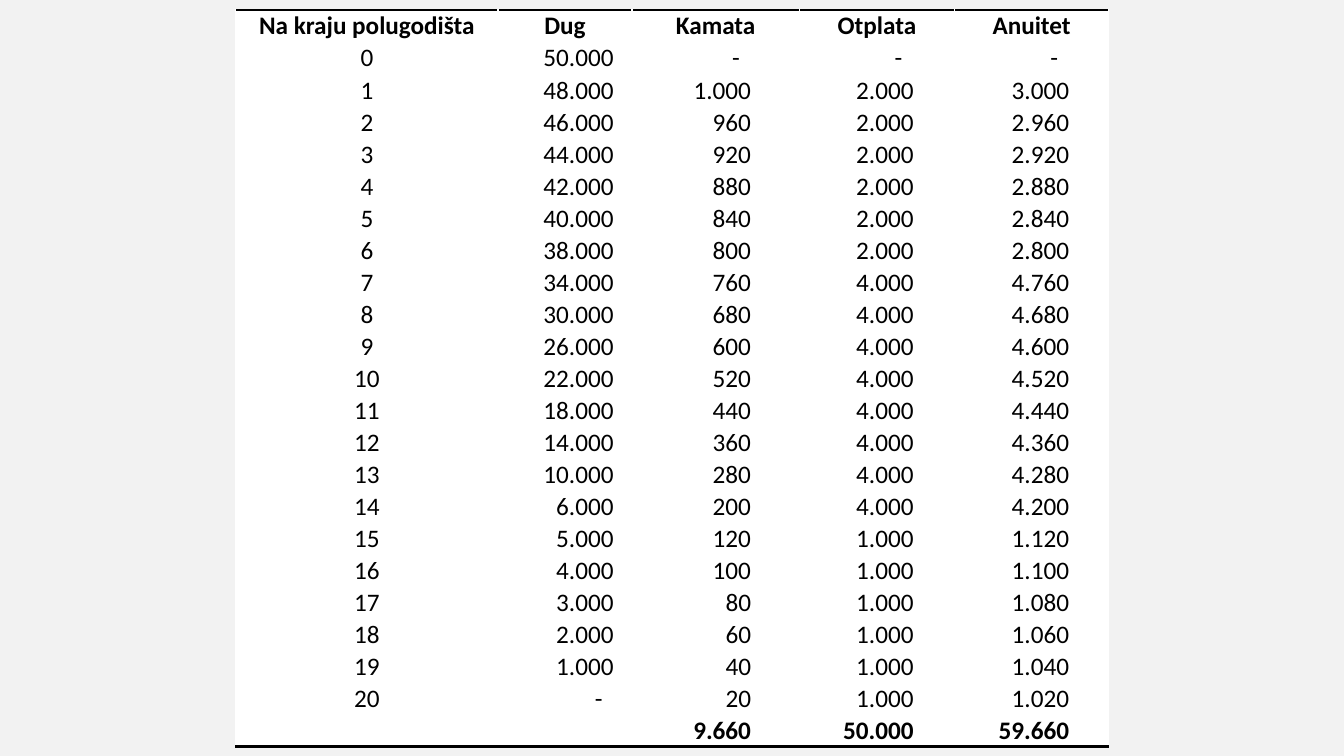
"""Build a one-slide loan repayment schedule with half-yearly instalments."""
from dataclasses import dataclass

from lxml import etree
from pptx import Presentation
from pptx.dml.color import RGBColor
from pptx.enum.text import MSO_ANCHOR, PP_ALIGN
from pptx.oxml.ns import qn
from pptx.util import Pt

CENTER, RIGHT = PP_ALIGN.CENTER, PP_ALIGN.RIGHT
MIDDLE = MSO_ANCHOR.MIDDLE


@dataclass(frozen=True)
class Theme:
    backdrop: str = "F2F2F2"
    paper: str = "FFFFFF"
    ink: str = "000000"
    font: str = "Calibri"
    size: float = 18
    rule: float = 2


theme = Theme()


def amount(value):
    return f"{value:,}".replace(",", ".") if value else "-"


def add_rule(cell, side):
    line = etree.Element(qn(f"a:{side}"), w=str(Pt(theme.rule)))
    fill = etree.SubElement(line, qn("a:solidFill"))
    etree.SubElement(fill, qn("a:srgbClr"), val=theme.ink)
    cell._tc.get_or_add_tcPr().insert(0, line)


headings = ["Na kraju polugodišta", "Dug", "Kamata", "Otplata", "Anuitet"]
column_widths = [187.2, 95.8, 119.5, 110.9, 110.1]
right_insets = [0.72, 13.2, 34.5, 29.3, 28.3]
dash_inset = 8
row_height = 22.88
repayments = [2000] * 6 + [4000] * 8 + [1000] * 6
percent = 2

debt = sum(repayments)
schedule = [headings, ["0", amount(debt), "-", "-", "-"]]
total_interest = 0
for period, repayment in enumerate(repayments, start=1):
    interest = debt * percent // 100
    debt -= repayment
    total_interest += interest
    figures = [debt, interest, repayment, interest + repayment]
    schedule.append([str(period)] + [amount(figure) for figure in figures])
total_repaid = sum(repayments)
totals = [total_interest, total_repaid, total_interest + total_repaid]
schedule.append(["", ""] + [amount(total) for total in totals])
last_row = len(schedule) - 1

prs = Presentation()
prs.slide_width, prs.slide_height = Pt(960), Pt(540)
slide = prs.slides.add_slide(prs.slide_layouts[6])
slide.background.fill.solid()
slide.background.fill.fore_color.rgb = RGBColor.from_string(theme.backdrop)

table = slide.shapes.add_table(
    len(schedule), len(headings), Pt(168.5), Pt(7),
    Pt(sum(column_widths)), Pt(row_height * len(schedule)),
).table
table.first_row = table.horz_banding = False
for column, width in zip(table.columns, column_widths):
    column.width = Pt(width)

for row_index, entries in enumerate(schedule):
    table.rows[row_index].height = Pt(row_height)
    for column_index, entry in enumerate(entries):
        cell = table.cell(row_index, column_index)
        centred = row_index == 0 or column_index == 0
        inset = 0.72 if centred else right_insets[column_index]
        if entry == "-":
            inset += dash_inset
        cell_format = {
            "margin_left": Pt(0.72),
            "margin_right": Pt(inset),
            "margin_top": Pt(0.72),
            "margin_bottom": Pt(0),
            "vertical_anchor": MIDDLE,
        }
        for name, value in cell_format.items():
            setattr(cell, name, value)
        cell.fill.solid()
        cell.fill.fore_color.rgb = RGBColor.from_string(theme.paper)
        if row_index == 0:
            add_rule(cell, "lnT")
        elif row_index == last_row:
            add_rule(cell, "lnB")
        if not entry:
            continue
        paragraph = cell.text_frame.paragraphs[0]
        paragraph.alignment = CENTER if centred else RIGHT
        run = paragraph.add_run()
        run.text = entry
        font_format = {
            "name": theme.font,
            "size": Pt(theme.size),
            "bold": row_index in (0, last_row),
        }
        for name, value in font_format.items():
            setattr(run.font, name, value)
        run.font.color.rgb = RGBColor.from_string(theme.ink)

prs.save("out.pptx")
